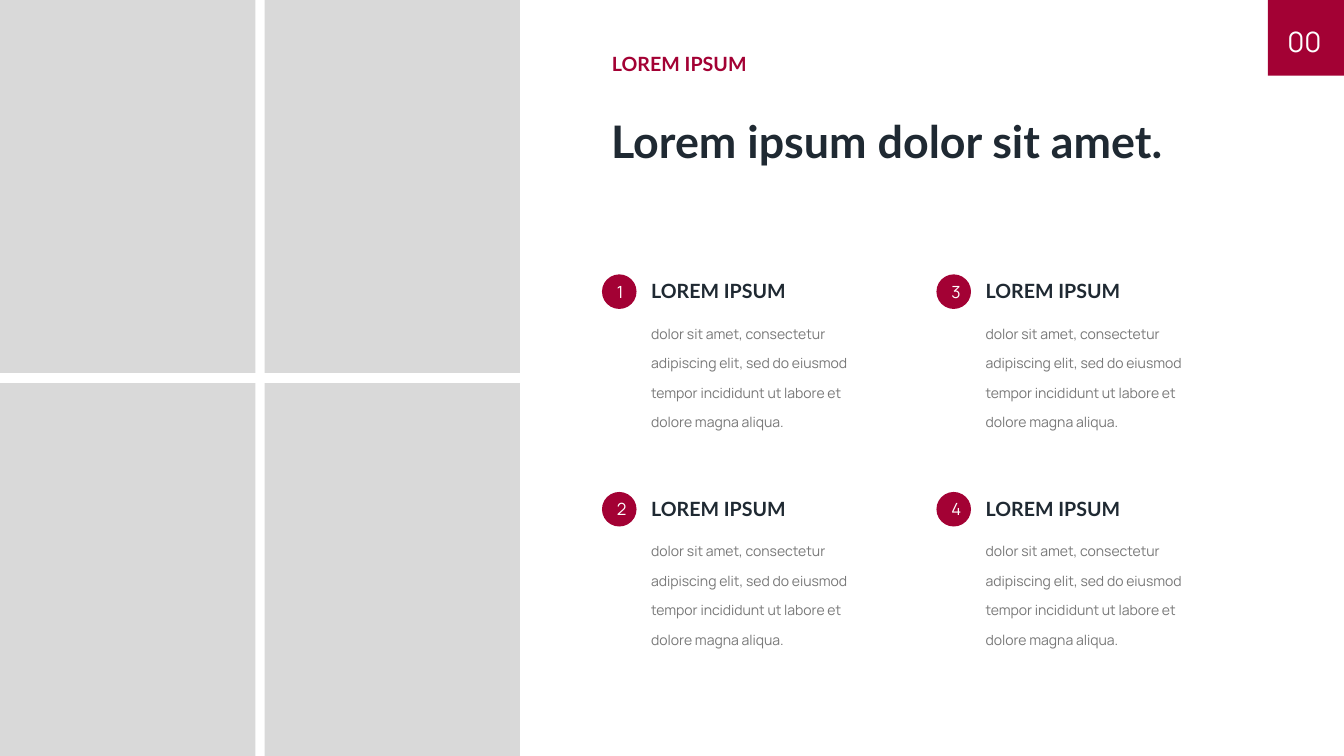
from dataclasses import dataclass
from itertools import product

from pptx import Presentation
from pptx.dml.color import RGBColor
from pptx.enum.shapes import MSO_SHAPE
from pptx.enum.text import MSO_ANCHOR, MSO_AUTO_SIZE, PP_ALIGN
from pptx.util import Pt

RECT, OVAL = MSO_SHAPE.RECTANGLE, MSO_SHAPE.OVAL
TOP, MID = MSO_ANCHOR.TOP, MSO_ANCHOR.MIDDLE
LEFT, CENTER, RIGHT = PP_ALIGN.LEFT, PP_ALIGN.CENTER, PP_ALIGN.RIGHT
GROW, FIXED = MSO_AUTO_SIZE.SHAPE_TO_FIT_TEXT, MSO_AUTO_SIZE.NONE


@dataclass(frozen=True)
class Theme:
    red: str = "A30134"
    dark: str = "1F2932"
    gray: str = "787878"
    tile: str = "D9D9D9"
    white: str = "FFFFFF"
    head: str = "Lato"
    body: str = "Manrope"
    title: int = 32
    page: int = 20
    label: int = 14
    digit: int = 12
    small: int = 10


THEME = Theme()
LABEL = "LOREM IPSUM"
COPY = ("dolor sit amet, consectetur adipiscing elit, sed do eiusmod "
        "tempor incididunt ut labore et dolore magna aliqua.")


def write(shape, text, *, size, color, font=THEME.body, bold=False,
          align=LEFT, anchor=TOP, line=1.0, fit=GROW):
    """Put formatted text into a shape."""
    frame = shape.text_frame
    frame.word_wrap = True
    frame.auto_size = fit
    frame.vertical_anchor = anchor
    para = frame.paragraphs[0]
    para.alignment = align
    para.line_spacing = line
    run = para.add_run()
    run.text = text
    run.font.name = font
    run.font.size = Pt(size)
    run.font.bold = bold
    run.font.color.rgb = RGBColor.from_string(color)


def place(shape, x, y, w, h):
    shape.left, shape.top, shape.width, shape.height = map(Pt, (x, y, w, h))


def add_box(shapes, x, y, w, h, text, **style):
    box = shapes.add_textbox(Pt(x), Pt(y), Pt(w), Pt(h))
    write(box, text, **style)


def add_block(shapes, kind, x, y, w, h, fill):
    block = shapes.add_shape(kind, Pt(x), Pt(y), Pt(w), Pt(h))
    block.shadow.inherit = False
    block.fill.solid()
    block.fill.fore_color.rgb = RGBColor.from_string(fill)
    block.line.fill.background()
    return block


def add_tiles(shapes):
    for col, row in product(range(2), repeat=2):
        add_block(shapes, RECT, col * 189, row * 273.6, 182.4, 266.4,
                  THEME.tile)


def add_page(slide, text):
    add_block(slide.shapes, RECT, 905.7, 0, 54.3, 54, THEME.red)
    # The body holder moves in front of its red square
    page = slide.placeholders[1]
    slide.shapes._spTree.append(page._element)
    place(page, 904.3, 4.3, 39.6, 49.7)
    frame = page.text_frame
    frame.margin_left = frame.margin_right = 0
    frame.margin_top = frame.margin_bottom = 0
    para = frame.paragraphs[0]
    props = para._p.get_or_add_pPr()
    props.set("marL", "0")
    props.set("indent", "0")
    para.space_before = Pt(0)
    write(page, text, size=THEME.page, color=THEME.white, align=RIGHT,
          anchor=MID, fit=FIXED)
    # A page number carries no bullet
    props.insert_element_before(
        props.makeelement(props.tag.replace("pPr", "buNone"), {}),
        "a:tabLst", "a:defRPr", "a:extLst")


def add_item(slide, x, y, num):
    shapes = slide.shapes.add_group_shape().shapes
    add_box(shapes, x + 28, y + 24, 170, 90, COPY, size=THEME.small,
            color=THEME.gray, line=1.75)
    add_box(shapes, x + 28, y, 170, 24.3, LABEL, size=THEME.label,
            color=THEME.dark, font=THEME.head, bold=True)
    dot = add_block(shapes, OVAL, x, y + 0.2, 24.7, 24.7, THEME.red)
    write(dot, str(num), size=THEME.digit, color=THEME.white, align=CENTER,
          anchor=MID, fit=FIXED)


def main():
    deck = Presentation()
    deck.slide_width, deck.slide_height = Pt(960), Pt(540)
    slide = deck.slides.add_slide(deck.slide_layouts[1])

    # Tiles and page number
    add_tiles(slide.shapes)
    add_page(slide, "00")

    # Heading
    title = slide.shapes.title
    place(title, 429.3, 82, 448, 43.2)
    write(title, "Lorem ipsum dolor sit amet.", size=THEME.title,
          color=THEME.dark, font=THEME.head, bold=True, line=0.9)
    add_box(slide.shapes, 430, 33.8, 270, 24.3, LABEL, size=THEME.label,
            color=THEME.red, font=THEME.head, bold=True)

    # Numbered items run down each column
    for num, (col, row) in enumerate(product(range(2), repeat=2), 1):
        add_item(slide, 430 + col * 238.9, 195.8 + row * 155.4, num)

    deck.save("out.pptx")


if __name__ == "__main__":
    main()
